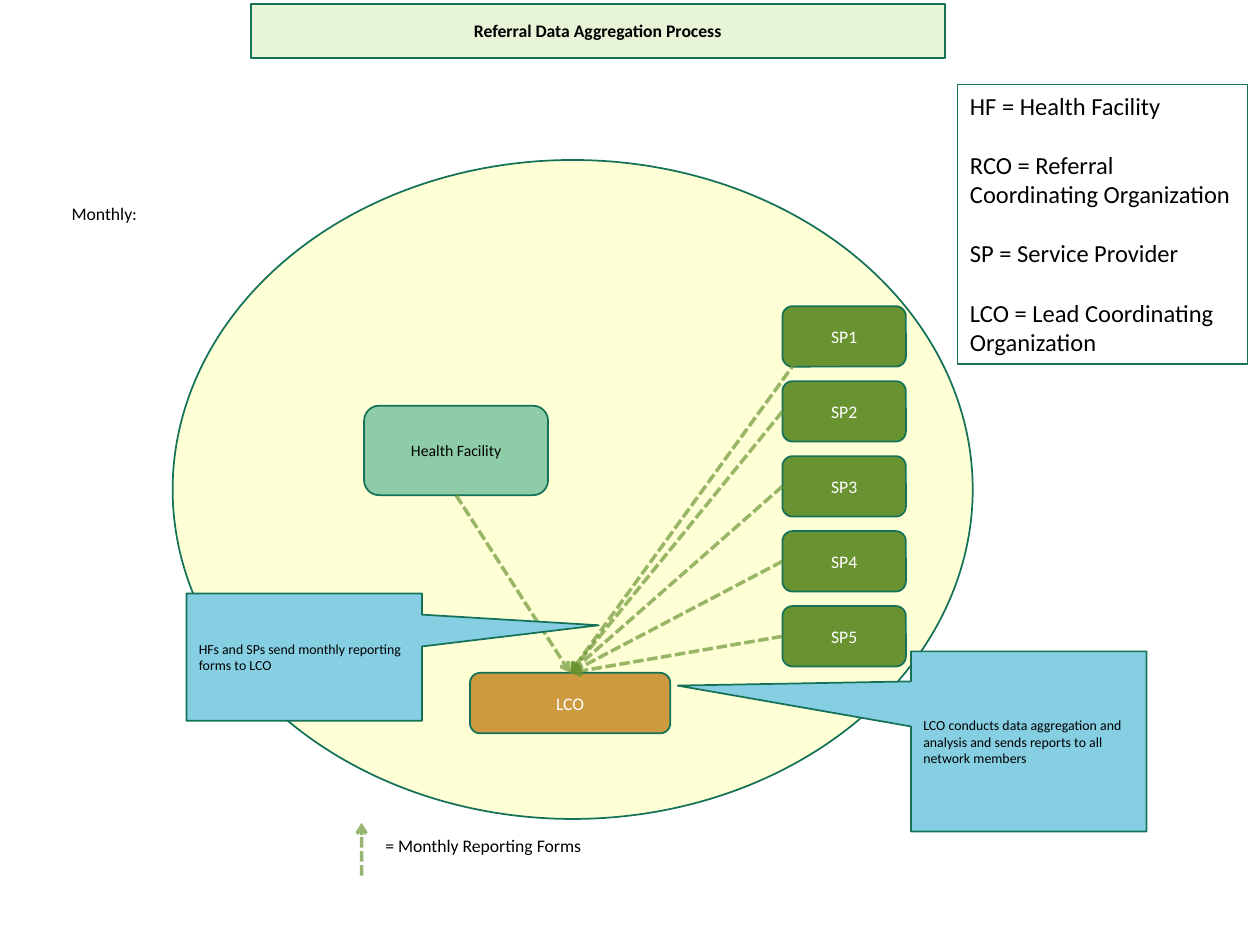
from lxml.etree import SubElement
from pptx import Presentation
from pptx.dml.color import RGBColor
from pptx.enum.dml import MSO_LINE
from pptx.enum.shapes import MSO_CONNECTOR, MSO_SHAPE
from pptx.enum.text import MSO_ANCHOR, MSO_AUTO_SIZE, PP_ALIGN
from pptx.oxml.ns import qn
from pptx.util import Inches, Pt

BLACK, WHITE = "000000", "FFFFFF"
OUTLINE, GREEN, SKY = "157259", "699331", "86CFE2"
LEFT, CENTER = PP_ALIGN.LEFT, PP_ALIGN.CENTER
TOP, MIDDLE = MSO_ANCHOR.TOP, MSO_ANCHOR.MIDDLE
TOP_SITE, LEFT_SITE, BOTTOM_SITE = 0, 1, 2


def set_color(paint, color, alpha=100):
    paint.solid()
    paint.fore_color.rgb = RGBColor.from_string(color)
    if alpha < 100:
        paint_color = paint._xPr.find(qn("a:solidFill"))[0]
        SubElement(paint_color, qn("a:alpha"), val=str(alpha * 1000))


def set_format(target, values):
    for name, value in values.items():
        setattr(target, name, value)


def write(shape, paragraphs, size, color=BLACK, align=LEFT, anchor=TOP, bold=False, gap=0):
    frame = shape.text_frame
    frame.text = "\n".join(paragraphs)
    set_format(frame, {"word_wrap": True, "auto_size": MSO_AUTO_SIZE.NONE,
                       "vertical_anchor": anchor})
    for paragraph in frame.paragraphs:
        set_format(paragraph, {"alignment": align, "space_before": Pt(0),
                               "space_after": Pt(gap)})
        set_format(paragraph.font, {"name": "Calibri", "size": Pt(size), "bold": bold})
        set_color(paragraph.font.fill, color)


def add_block(slide, kind, box, fill=None, alpha=100, line_width=1):
    block = slide.shapes.add_shape(kind, *map(Inches, box))
    block.shadow.inherit = False
    if fill:
        set_color(block.fill, fill, alpha)
    else:
        block.fill.background()
    set_color(block.line.fill, OUTLINE)
    block.line.width = Pt(line_width)
    return block


def add_node(slide, box, label, fill, alpha=100, size=10.1, color=WHITE):
    node = add_block(slide, MSO_SHAPE.ROUNDED_RECTANGLE, box, fill, alpha)
    write(node, [label], size, color, CENTER, MIDDLE)
    return node


def add_label(slide, box, text):
    label = slide.shapes.add_textbox(*map(Inches, box))
    write(label, [text], 10.1)


def add_report_arrow(slide, start=(0, 0), end=(0, 0)):
    arrow = slide.shapes.add_connector(MSO_CONNECTOR.STRAIGHT, *map(Inches, (*start, *end)))
    set_color(arrow.line.fill, GREEN, 67)
    set_format(arrow.line, {"width": Pt(2), "dash_style": MSO_LINE.SQUARE_DOT})
    SubElement(arrow.line._get_or_add_ln(), qn("a:tailEnd"), type="arrow")
    SubElement(arrow._element.spPr, qn("a:effectLst"))
    return arrow


def add_banner(slide, box, text):
    banner = slide.shapes.title
    set_format(banner, dict(zip(("left", "top", "width", "height"), map(Inches, box))))
    set_color(banner.fill, "92D050", 22)
    set_color(banner.line.fill, OUTLINE)
    banner.line.width = Pt(1)
    write(banner, [text], 10.1, align=CENTER, anchor=MIDDLE, bold=True)


def add_providers(slide, box, count=5, node_height=0.48):
    left, top, width, height = box
    step = (height - node_height) / (count - 1)
    return [add_node(slide, (left, top + i * step, width, node_height), f"SP{i + 1}", GREEN)
            for i in range(count)]


def add_network(slide, box):
    left, top, width, height = box
    add_block(slide, MSO_SHAPE.OVAL, box, "FFFF00", 16)
    facility = add_node(slide, (left + 1.52, top + 1.95, 1.46, 0.71), "Health Facility",
                        "1D9A78", 50, 9, BLACK)
    providers = add_providers(slide, (left + 4.84, top + 1.16, 0.98, 2.86))
    lco = add_node(slide, (left + 2.36, top + 4.07, 1.59, 0.48), "LCO", "BC770B", 74)

    # Reports flow from the facility and every provider to the LCO
    for sender in [facility, *providers]:
        if sender is providers[0]:
            arrow = add_report_arrow(slide, start=(left + 5.02, top + 1.5))
        else:
            arrow = add_report_arrow(slide)
            arrow.begin_connect(sender, BOTTOM_SITE if sender is facility else LEFT_SITE)
        arrow.end_connect(lco, TOP_SITE)


def add_arrow_key(slide, box):
    left, top, width, height = box
    add_label(slide, (left + 0.09, top + 0.05, width - 0.09, height - 0.05),
              "= Monthly Reporting Forms")
    add_report_arrow(slide, (left, top + 0.42), (left, top))


def add_callout(slide, box, pointer, text):
    callout = add_block(slide, MSO_SHAPE.RECTANGULAR_CALLOUT, box, SKY)
    for i, offset in enumerate(pointer):
        callout.adjustments[i] = offset
    write(callout, [text], 7.9, anchor=MIDDLE)


def add_abbreviations(slide, box, entries):
    panel = add_block(slide, MSO_SHAPE.RECTANGLE, box, line_width=0.75)
    write(panel, entries, 14, gap=17)


def main():
    deck = Presentation()
    set_format(deck, {"slide_width": Inches(10), "slide_height": Inches(7.5)})
    slide = deck.slides.add_slide(deck.slide_layouts[5])

    add_banner(slide, (1.99, 0.03, 5.51, 0.43), "Referral Data Aggregation Process")
    add_network(slide, (1.37, 1.27, 6.35, 5.23))
    add_label(slide, (0.47, 1.56, 1.39, 0.43), "Monthly:")
    add_arrow_key(slide, (2.87, 6.53, 3.35, 0.76))

    # Explanations of the two steps
    add_callout(slide, (1.48, 4.71, 1.87, 1.01), (1.25, -0.25),
                "HFs and SPs send monthly reporting forms to LCO")
    add_callout(slide, (7.23, 5.17, 1.87, 1.43), (-1.49, -0.31),
                "LCO conducts data aggregation and analysis and sends reports "
                "to all network members")

    add_abbreviations(slide, (7.6, 0.67, 2.3, 2.22), [
        "HF = Health Facility",
        "RCO = Referral Coordinating Organization",
        "SP = Service Provider",
        "LCO = Lead Coordinating Organization",
    ])
    deck.save("out.pptx")


if __name__ == "__main__":
    main()
